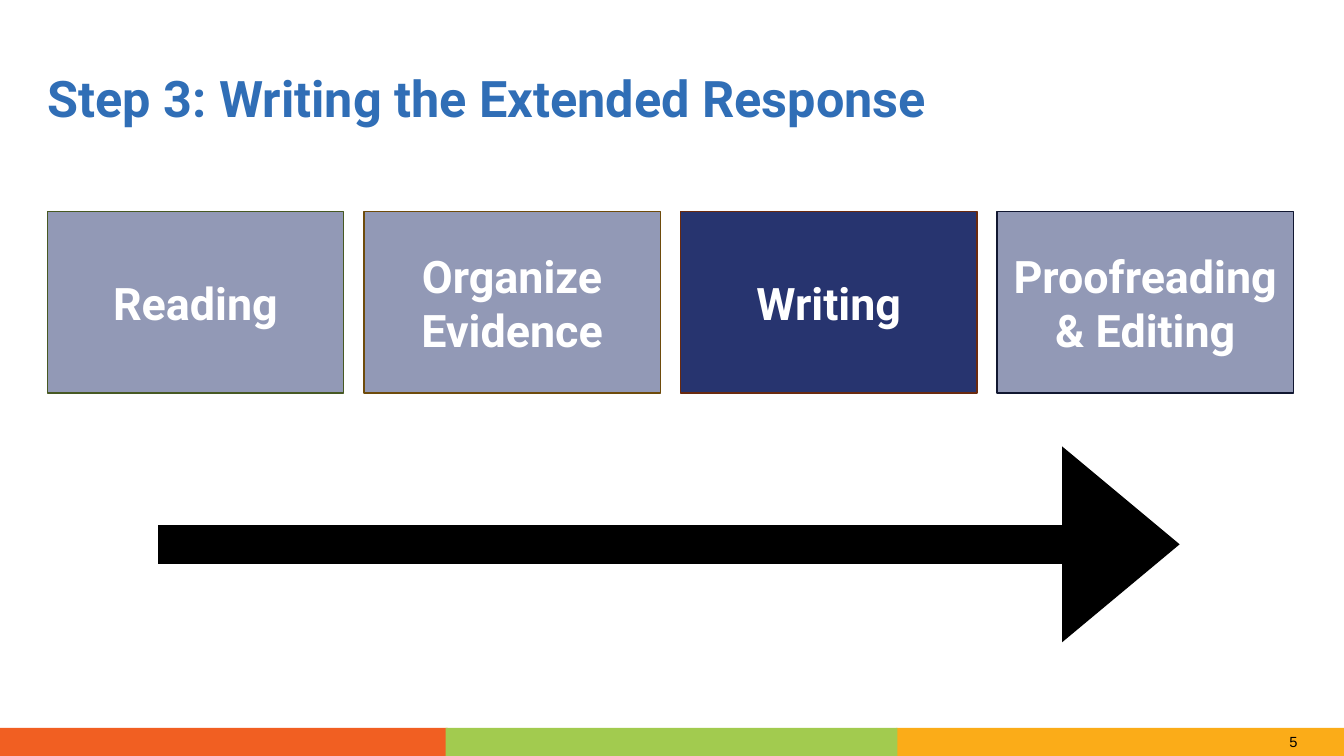
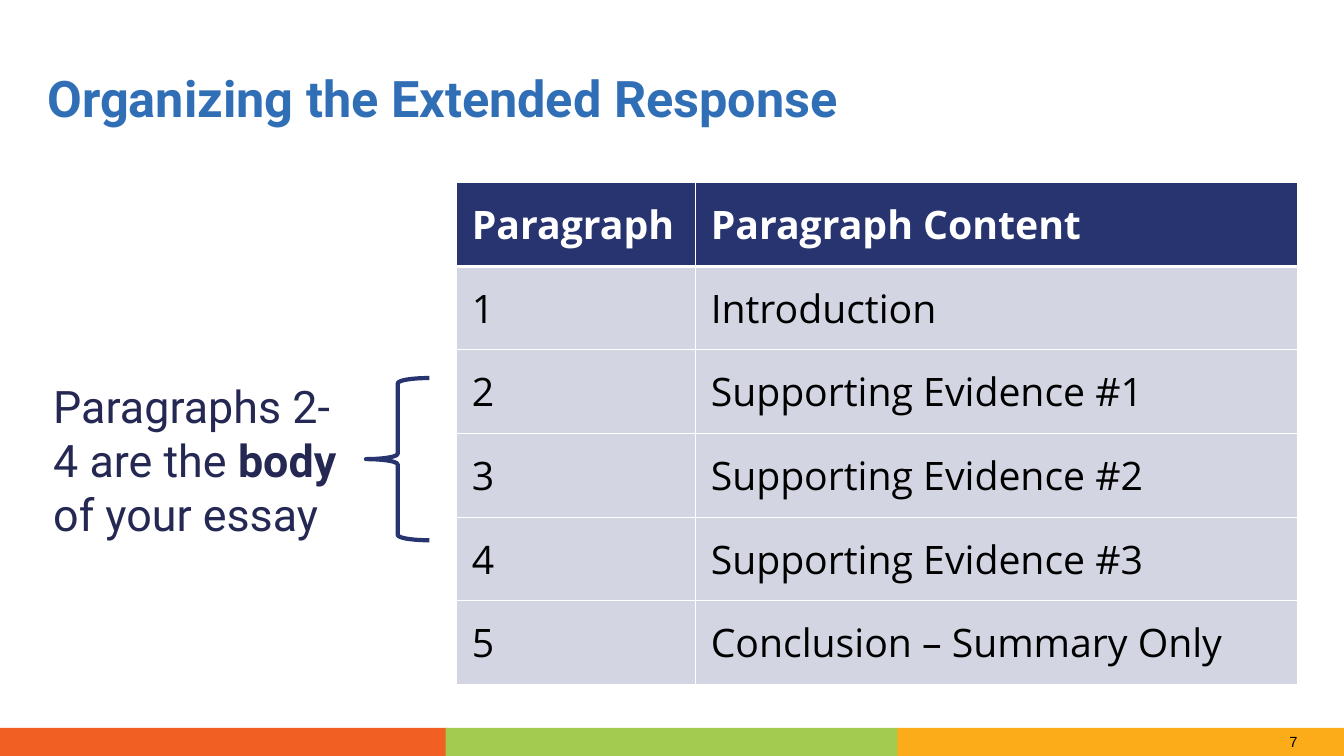
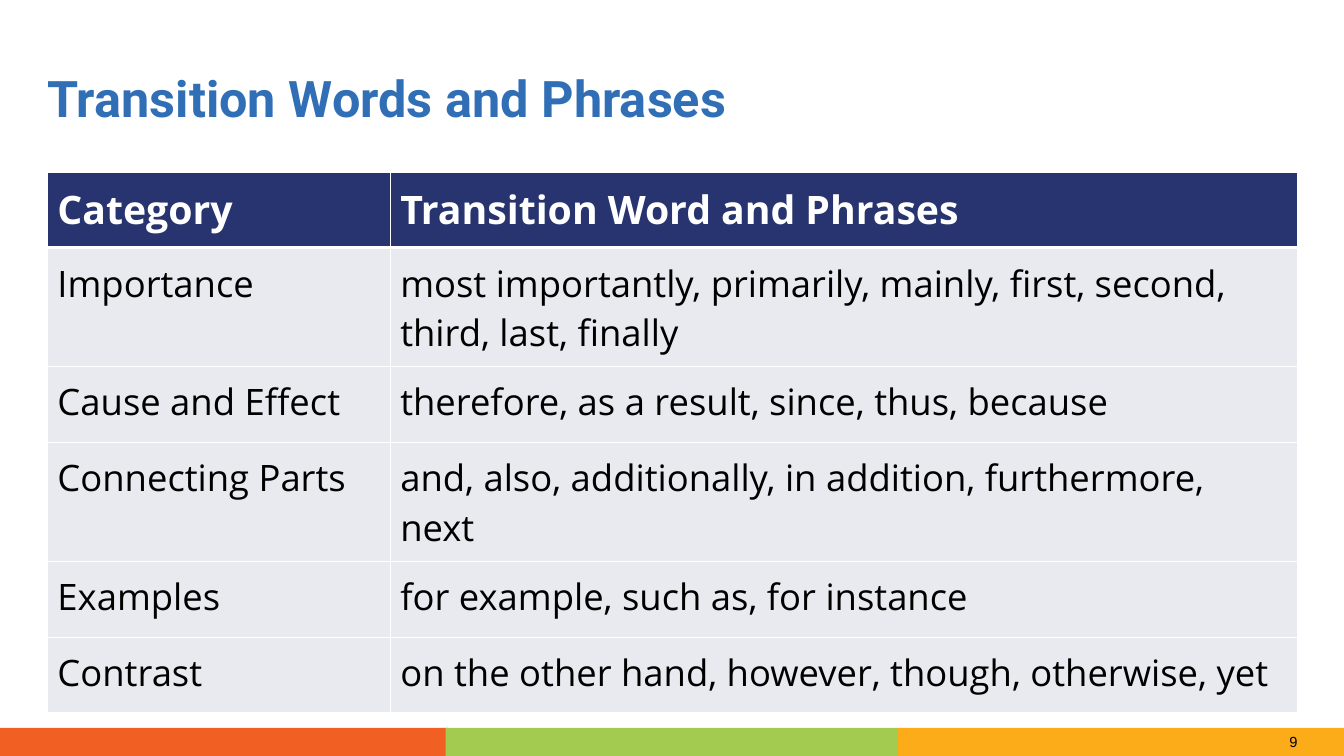
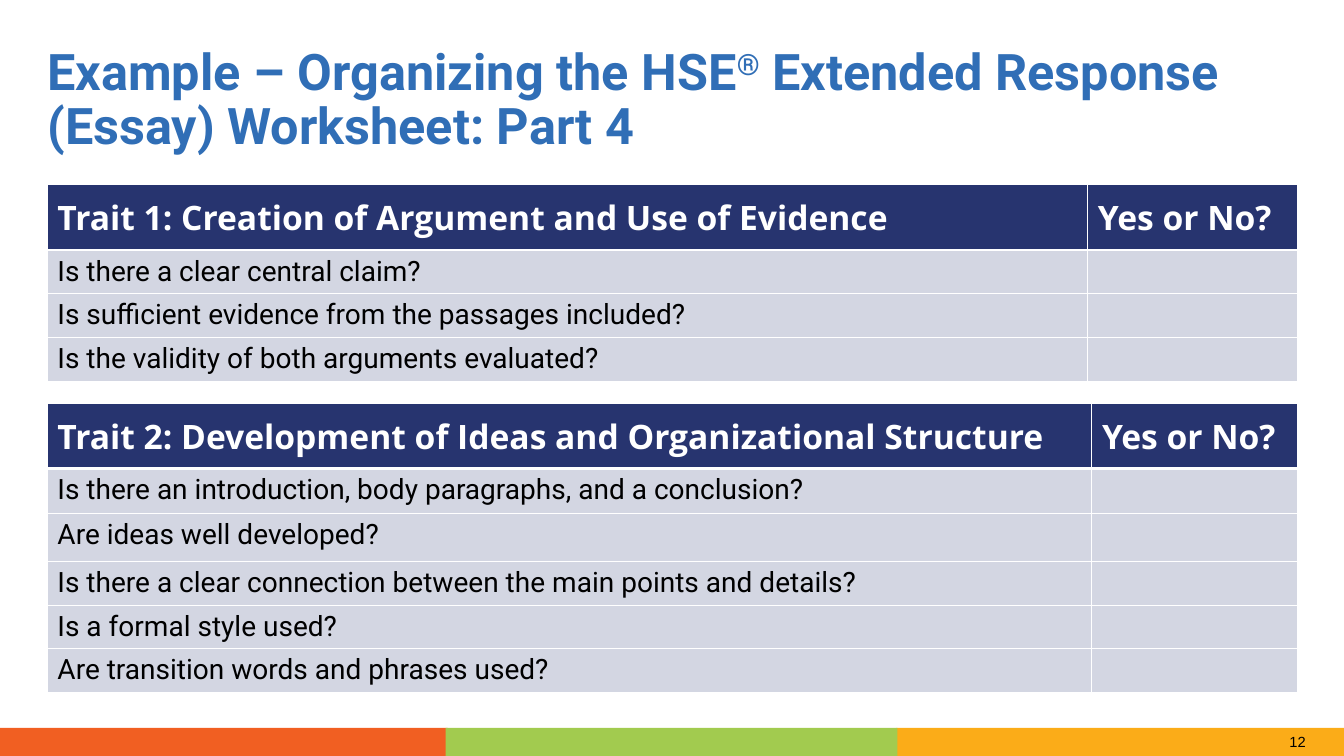
from lxml import etree
from pptx import Presentation
from pptx.dml.color import RGBColor as RGB
from pptx.enum.shapes import MSO_CONNECTOR as LINK, MSO_SHAPE as SHAPE
from pptx.enum.text import MSO_ANCHOR as ANCHOR, PP_ALIGN as ALIGN
from pptx.oxml.ns import qn
from pptx.util import Inches, Pt

HEX = {
    "white": "FFFFFF", "black": "000000", "blue": "306EB6", "navy": "27346F",
    "ink": "242852", "orange": "F15F22", "green": "A2CB4F", "gold": "FBAC18",
    "olive": "475923", "brown": "6E4B0B", "rust": "6A2A0F", "night": "111731",
}
RGBS = {name: RGB.from_string(code) for name, code in HEX.items()}

TITLE = {"name": "Roboto", "size": Pt(36), "bold": True, "color": "blue"}
NUMBER = {"name": "Arial", "size": Pt(10.5), "color": "black"}
STEP = {"name": "Roboto", "size": Pt(32), "bold": True, "color": "white"}
NOTE = {"name": "Roboto", "size": Pt(32), "color": "ink"}
HEAD = {"name": "Open Sans", "size": Pt(28), "bold": True, "color": "white"}
BODY = {"name": "Open Sans", "size": Pt(28), "bold": False, "color": "black"}
SMALL = {**BODY, "size": Pt(26)}
TRAIT = {**HEAD, "size": Pt(24)}
ASK = {**BODY, "name": "Roboto", "size": Pt(20)}


def write(para, text, style):
    """Add one run in the given style and return it."""
    run = para.add_run()
    run.text = text
    for key, value in style.items():
        if key == "color":
            run.font.color.rgb = RGBS[value]
        else:
            setattr(run.font, key, value)
    return run


def fade(part, share):
    """Make the first colour in an XML part opaque to a share in percent."""
    color = next(part.iter(qn("a:srgbClr")))
    etree.SubElement(color, qn("a:alpha"), val=str(share * 1000))


deck = Presentation()
deck.slide_width, deck.slide_height = Inches(13.33), Inches(7.5)

# Title, colour bands and number on every slide
BANDS = [(8.89, 4.44, "gold"), (0, 4.44, "orange"), (4.42, 4.48, "green")]
PAGES = [
    (5, ["Step 3: Writing the Extended Response"]),
    (7, ["Organizing the Extended Response"]),
    (9, ["Transition Words and Phrases"]),
    (12, ["Example – Organizing the HSE", "®",
          " Extended Response (Essay) Worksheet: Part 4"]),
]
slides = []
for number, title in PAGES:
    slide = deck.slides.add_slide(deck.slide_layouts[6])
    slides.append(slide)
    for left, width, color in BANDS:
        band = slide.shapes.add_shape(
            SHAPE.RECTANGLE, Inches(left), Inches(7.22), Inches(width), Inches(0.28))
        band.shadow.inherit = False
        band.fill.solid()
        band.fill.fore_color.rgb = RGBS[color]
        band.line.fill.background()
    box = slide.shapes.add_textbox(
        Inches(12.69), Inches(7.22), Inches(0.38), Inches(0.28))
    box.text_frame.word_wrap = True
    write(box.text_frame.paragraphs[0], str(number), NUMBER)
    box = slide.shapes.add_textbox(
        Inches(0.47), Inches(0.77), Inches(12.4), Inches(0.47))
    frame = box.text_frame
    frame.word_wrap = True
    frame.vertical_anchor = ANCHOR.MIDDLE
    for side in ("left", "top", "right", "bottom"):
        setattr(frame, f"margin_{side}", 0)
    para = frame.paragraphs[0]
    para.line_spacing = 0.9
    for text in title:
        run = write(para, text, TITLE)
        if text == "®":
            run.font.element.set("baseline", "30000") if hasattr(
                run.font, "element") else run._r.get_or_add_rPr().set("baseline", "30000")

first, second, third, fourth = slides

# Four steps, with the current one at full strength
STEPS = [
    ("Reading", "olive"), ("Organize Evidence", "brown"),
    ("Writing", "rust"), ("Proofreading & Editing", "night"),
]
for i, (text, edge) in enumerate(STEPS):
    step = first.shapes.add_shape(
        SHAPE.RECTANGLE, Inches(0.47 + 3.14 * i), Inches(2.1), Inches(2.94), Inches(1.8))
    step.shadow.inherit = False
    step.fill.solid()
    step.fill.fore_color.rgb = RGBS["navy"]
    if text != "Writing":
        fade(step.element, 50)
    step.line.color.rgb = RGBS[edge]
    step.line.width = Pt(1)
    frame = step.text_frame
    frame.word_wrap = True
    frame.vertical_anchor = ANCHOR.MIDDLE
    frame.paragraphs[0].alignment = ALIGN.CENTER
    write(frame.paragraphs[0], text, STEP)

arrow = first.shapes.add_connector(
    LINK.STRAIGHT, Inches(1.57), Inches(5.4), Inches(11.7), Inches(5.4))
arrow.line.color.rgb = RGBS["black"]
arrow.line.width = Pt(28)
etree.SubElement(arrow.line._get_or_add_ln(), qn("a:tailEnd"),
                 type="triangle", w="lg", len="med")
etree.SubElement(arrow.element.spPr, qn("a:effectLst"))

# Tables: slide, left, top, widths, heights, header and body style,
# header and body insets (side, top), body tint, rows
TABLES = [
    (second, 4.53, 1.81, [2.37, 5.97], [0.83] * 6, HEAD, BODY,
     (0.15, 0.15), (0.15, 0.15), 20, [
         ("Paragraph", "Paragraph Content"),
         ("1", "Introduction"),
         ("2", "Supporting Evidence #1"),
         ("3", "Supporting Evidence #2"),
         ("4", "Supporting Evidence #3"),
         ("5", "Conclusion – Summary Only"),
     ]),
    (third, 0.47, 1.71, [3.4, 9], [0.75, 1.18, 0.75, 1.18, 0.75, 0.75], HEAD, SMALL,
     (0.1, 0.1), (0.1, 0.1), 10, [
         ("Category", "Transition Word and Phrases"),
         ("Importance", "most importantly, primarily, mainly, first, second, "
                        "third, last, finally"),
         ("Cause and Effect", "therefore, as a result, since, thus, because"),
         ("Connecting Parts", "and, also, additionally, in addition, furthermore, next"),
         ("Examples", "for example, such as, for instance"),
         ("Contrast", "on the other hand, however, though, otherwise, yet"),
     ]),
    (fourth, 0.47, 1.83, [10.32, 2.08], [0.65] + [0.43] * 3, TRAIT, ASK,
     (0.1, 0.1), (0.1, 0.05), 20, [
         ("Trait 1: Creation of Argument and Use of Evidence", "Yes or No?"),
         ("Is there a clear central claim?", ""),
         ("Is sufficient evidence from the passages included?", ""),
         ("Is the validity of both arguments evaluated?", ""),
     ]),
    (fourth, 0.47, 4, [10.36, 2.04], [0.65, 0.44, 0.48, 0.43, 0.43, 0.43], TRAIT, ASK,
     (0.1, 0.1), (0.1, 0.05), 20, [
         ("Trait 2: Development of Ideas and Organizational Structure", "Yes or No?"),
         ("Is there an introduction, body paragraphs, and a conclusion?", ""),
         ("Are ideas well developed?", ""),
         ("Is there a clear connection between the main points and details?", ""),
         ("Is a formal style used?", ""),
         ("Are transition words and phrases used?", ""),
     ]),
]
for slide, left, top, widths, heights, head, body, wide, slim, tint, rows in TABLES:
    table = slide.shapes.add_table(
        len(rows), len(widths), Inches(left), Inches(top),
        Inches(sum(widths)), Inches(sum(heights))).table
    table.horz_banding = False
    for col, width in zip(table.columns, widths):
        col.width = Inches(width)
    for r, (row, height) in enumerate(zip(rows, heights)):
        table.rows[r].height = Inches(height)
        side, edge = slim if r else wide
        for c, text in enumerate(row):
            cell = table.cell(r, c)
            cell.margin_left = cell.margin_right = Inches(side)
            cell.margin_top = cell.margin_bottom = Inches(edge)
            cell.fill.solid()
            cell.fill.fore_color.rgb = RGBS["navy"]
            props = cell._tc.tcPr
            if r:
                fade(props, tint)
            if text:
                write(cell.text_frame.paragraphs[0], text, body if r else head)
            for k, tag in enumerate(("lnL", "lnR", "lnT", "lnB")):
                thick = (r, tag) in ((0, "lnB"), (1, "lnT"))
                line = etree.Element(qn(f"a:{tag}"), w=str(Pt(2.4 if thick else 0.8)))
                paint = etree.SubElement(line, qn("a:solidFill"))
                etree.SubElement(paint, qn("a:srgbClr"), val=HEX["white"])
                props.insert(k, line)

# Brace and note beside the body paragraphs
box = second.shapes.add_textbox(
    Inches(0.43), Inches(3.7), Inches(3.16), Inches(1.72))
frame = box.text_frame
frame.word_wrap = True
frame.vertical_anchor = ANCHOR.MIDDLE
for text, bold in [("Paragraphs 2-4 are the ", False), ("body ", True),
                   ("of your essay", False)]:
    write(frame.paragraphs[0], text, {**NOTE, "bold": bold})

brace = second.shapes.add_shape(
    SHAPE.LEFT_BRACE, Inches(3.63), Inches(3.75), Inches(0.63), Inches(1.61))
brace.shadow.inherit = False
brace.fill.background()
brace.line.color.rgb = RGBS["navy"]
brace.line.width = Pt(3)

deck.save("out.pptx")
